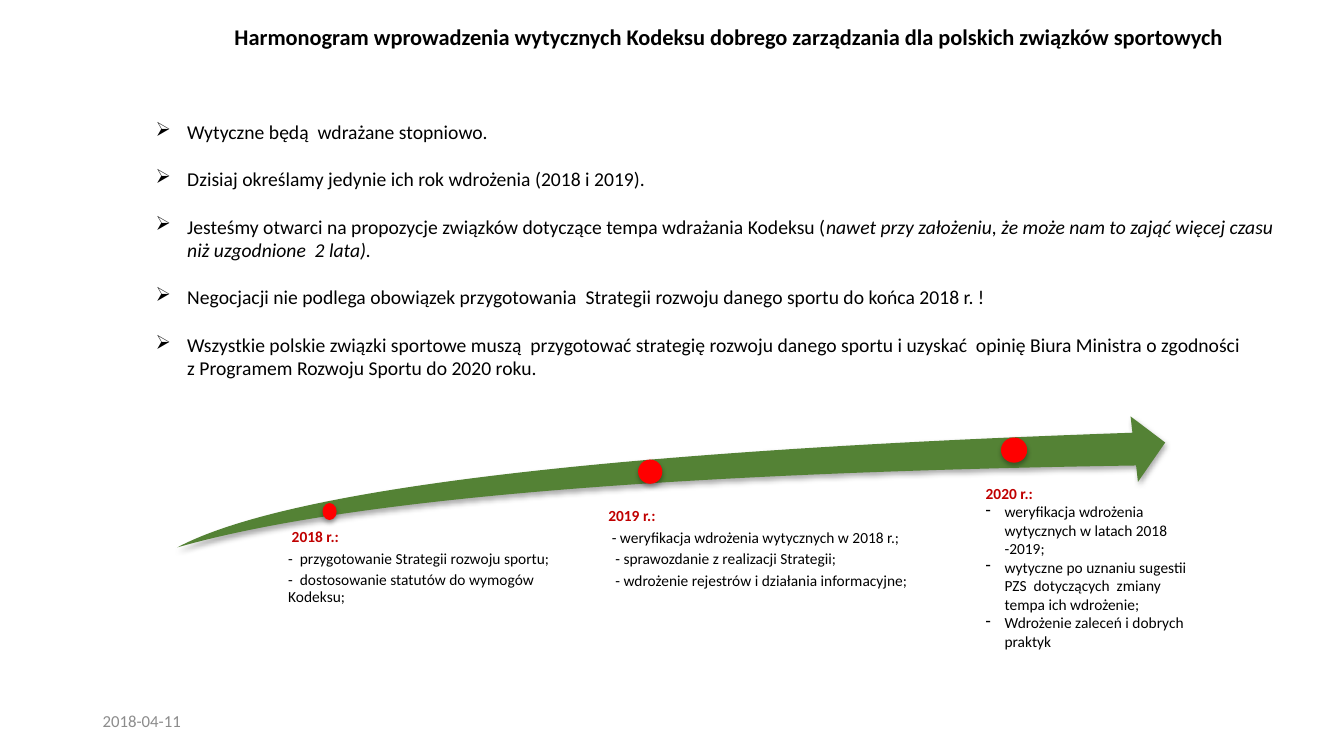
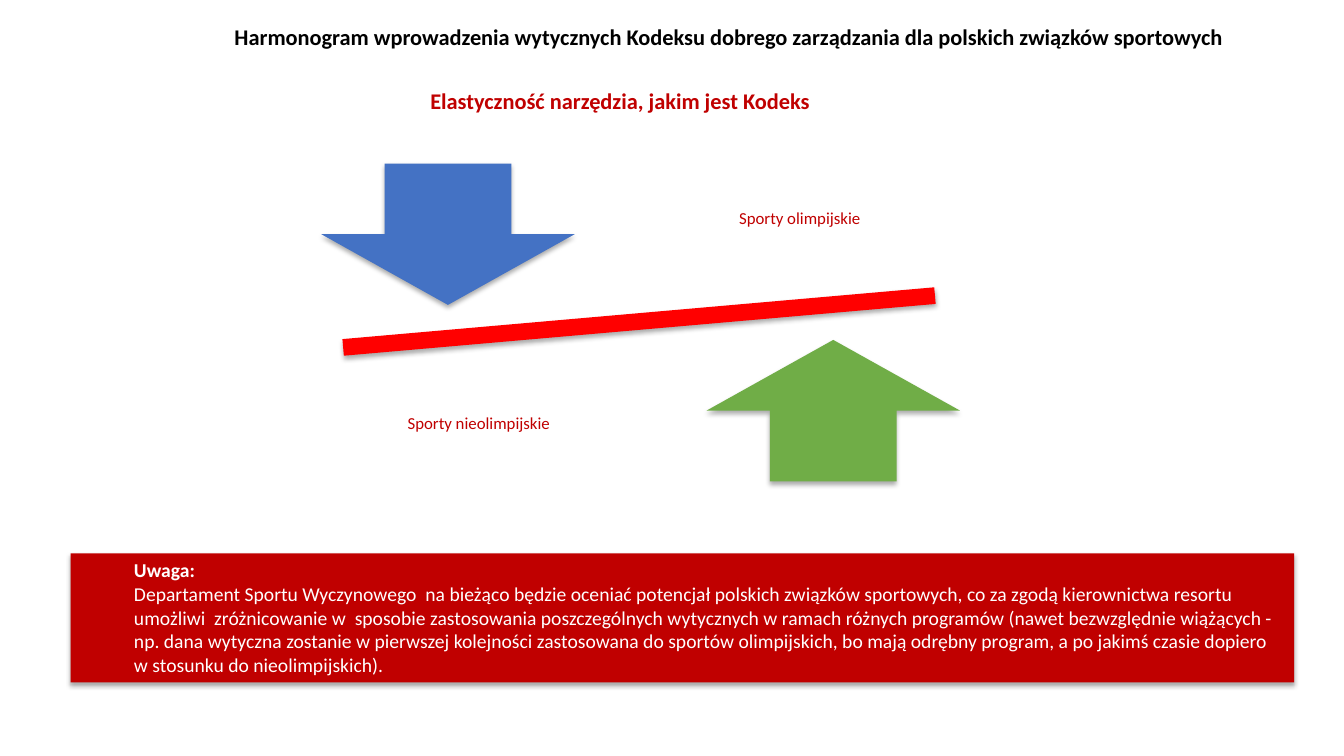
import pptx
import pptx.util
import pptx.dml.color
import pptx.enum.shapes
import pptx.enum.text
import pptx.oxml
import pptx.oxml.ns

Pt = pptx.util.Pt
FORM = pptx.enum.shapes.MSO_SHAPE
ALIGN = pptx.enum.text.PP_ALIGN
ANCHOR = pptx.enum.text.MSO_ANCHOR

HUES = {
    "black": "000000",
    "white": "FFFFFF",
    "gray": "8C8C8C",
    "crimson": "C00000",
    "red": "FF0000",
    "forest": "548235",
    "green": "70AD47",
    "blue": "4472C4",
}
TITLE = "Harmonogram wprowadzenia wytycznych Kodeksu dobrego zarządzania dla polskich związków sportowych"
SHADOW = (
    '<a:outerShdw %s blurRad="%d" dist="%d" dir="5400000" algn="t" rotWithShape="0">'
    '<a:srgbClr val="000000"><a:alpha val="32000"/></a:srgbClr></a:outerShdw>'
    % (pptx.oxml.ns.nsdecls("a"), Pt(3.5), Pt(2.2))
)
BULLET = "<a:buChar %s char=\"%s\"/>"


def apply(item, values):
    for name, value in values.items():
        setattr(item, name, value)


def tone(name):
    return pptx.dml.color.RGBColor.from_string(HUES[name])


def line(*runs, left=0, hang=0, mark=None, **look):
    return {"runs": runs, "left": left, "hang": hang, "mark": mark, "look": look}


class Deck:
    font = "Calibri"
    inset = (7.2, 3.6, 7.2, 3.6)

    def __init__(self):
        self.file = pptx.Presentation()
        apply(self.file, {"slide_width": Pt(960), "slide_height": Pt(540)})
        self.slide = None

    def page(self, title):
        self.slide = self.file.slides.add_slide(self.file.slide_layouts[5])
        head = self.slide.shapes.title
        spots = zip(("left", "top", "width", "height"), (92, 7.2, 857.5, 40.3))
        apply(head, {name: Pt(value) for name, value in spots})
        self.fill(head, [line((title, {"bold": True}), alignment=ALIGN.CENTER, line_spacing=0.9)],
                  16, anchor=ANCHOR.MIDDLE)

    def fill(self, shape, lines, size, hue="black", anchor=ANCHOR.TOP, inset=None):
        frame = shape.text_frame
        sides = ("margin_left", "margin_top", "margin_right", "margin_bottom")
        apply(frame, {side: Pt(gap) for side, gap in zip(sides, inset or self.inset)})
        apply(frame, {"word_wrap": True, "vertical_anchor": anchor,
                      "auto_size": pptx.enum.text.MSO_AUTO_SIZE.NONE})
        for place, entry in enumerate(lines):
            para = frame.add_paragraph() if place else frame.paragraphs[0]
            self.para(para, entry, size, hue)

    def para(self, para, entry, size, hue):
        props = para._p.get_or_add_pPr()
        props.set("marL", str(Pt(entry["left"])))
        props.set("indent", str(Pt(entry["hang"])))
        if entry["mark"]:
            mark = BULLET % (pptx.oxml.ns.nsdecls("a"), entry["mark"])
            props.append(pptx.oxml.parse_xml(mark))
        apply(para, {"alignment": ALIGN.LEFT, "space_before": Pt(0), **entry["look"]})
        for words, look in entry["runs"]:
            for place, part in enumerate(words.split("\n")):
                if place:
                    para.add_line_break()
                run = para.add_run()
                run.text = part
                look = dict(look)
                run.font.color.rgb = tone(look.pop("hue", hue))
                apply(run.font, {"name": self.font, "size": Pt(size), "bold": False, **look})

    def text(self, box, lines, size, **style):
        shape = self.slide.shapes.add_textbox(*map(Pt, box))
        self.fill(shape, lines, size, **style)

    def shape(self, form, box, hue, turn=0):
        shape = self.slide.shapes.add_shape(form, *map(Pt, box))
        shape.fill.solid()
        shape.fill.fore_color.rgb = tone(hue)
        shape.line.fill.background()
        shape.rotation = turn
        shape.shadow.inherit = False
        effects = shape._element.spPr.find(pptx.oxml.ns.qn("a:effectLst"))
        effects.append(pptx.oxml.parse_xml(SHADOW))
        return shape


def plan(deck):
    deck.page(TITLE)
    points = [
        [("Wytyczne będą  wdrażane stopniowo.", {})],
        [("Dzisiaj określamy jedynie ich rok wdrożenia (2018 i 2019).", {})],
        [("Jesteśmy otwarci na propozycje związków dotyczące tempa wdrażania Kodeksu (", {}),
         ("nawet przy założeniu, że może nam to zająć więcej czasu niż uzgodnione  2 lata).",
          {"italic": True})],
        [("Negocjacji nie podlega obowiązek przygotowania  Strategii rozwoju danego sportu do końca 2018 r. !", {})],
        [("Wszystkie polskie związki sportowe muszą  przygotować strategię rozwoju danego sportu "
          "i uzyskać  opinię Biura Ministra o zgodności \nz Programem Rozwoju Sportu do 2020 roku.", {})],
    ]
    deck.text((66.2, 82, 856, 193.7),
              [line(*runs, left=60.5, hang=-22.5, mark="➢", space_after=Pt(17)) for runs in points], 14)
    deck.text((66.2, 500.4, 216, 28.8), [line(("2018-04-11", {}))], 12, hue="gray", anchor=ANCHOR.MIDDLE)

    swoosh = deck.shape(FORM.SWOOSH_ARROW, (126.7, 297.4, 705.6, 93.6), "forest")
    swoosh.adjustments[0] = swoosh.adjustments[1] = 0.25
    for dot in ((230.4, 359.3, 10.1, 12.2), (455.8, 328.3, 17.3, 17.3), (715, 312.5, 18.7, 18)):
        deck.shape(FORM.OVAL, dot, "red")

    strong = {"bold": True, "hue": "crimson"}
    tight = {"line_spacing": 0.9, "space_after": Pt(3.6)}
    years = [
        ((200.9, 378, 219.6, 77.8), 5, "2018 r.:",
         [("-  przygotowanie Strategii rozwoju sportu;", 0),
          ("-  dostosowanie statutów do wymogów Kodeksu;", 0)]),
        ((422.6, 362.9, 275, 85), 9.4, "2019 r.:",
         [("- weryfikacja wdrożenia wytycznych w 2018 r.;", 5),
          ("- sprawozdanie z realizacji Strategii;", 7.5),
          ("- wdrożenie rejestrów i działania informacyjne;", 7.5)]),
    ]
    for box, edge, year, tasks in years:
        lines = [line((year, strong), left=2.5, **tight)]
        lines += [line((task, {}), left=left, **tight) for task, left in tasks]
        deck.text(box, lines, 11, inset=(edge, 0, 0, 0))

    goals = ["weryfikacja wdrożenia wytycznych w latach 2018 -2019;",
             "wytyczne po uznaniu sugestii  PZS  dotyczących  zmiany tempa ich wdrożenie;",
             "Wdrożenie zaleceń i dobrych praktyk"]
    deck.text((697, 342, 168.5, 127.4),
              [line(("2020 r.:", strong))]
              + [line((goal, {}), left=13.5, hang=-13.5, mark="-") for goal in goals], 11)


def balance(deck):
    deck.page(TITLE)
    deck.text((32.2, 59, 821.5, 85),
              [line(("Elastyczność narzędzia, jakim jest Kodeks", {"bold": True}), alignment=ALIGN.CENTER)],
              16, hue="crimson")
    note = deck.shape(FORM.RECTANGLE, (50.4, 395.3, 874, 92.2), "crimson")
    words = ("Departament Sportu Wyczynowego  na bieżąco będzie oceniać potencjał polskich związków "
             "sportowych, co za zgodą kierownictwa resortu umożliwi  zróżnicowanie w  sposobie "
             "zastosowania poszczególnych wytycznych w ramach różnych programów (nawet bezwzględnie "
             "wiążących - np. dana wytyczna zostanie w pierwszej kolejności zastosowana do sportów "
             "olimpijskich, bo mają odrębny program, a po jakimś czasie dopiero w stosunku do "
             "nieolimpijskich).")
    deck.fill(note, [line(("Uwaga:", {"bold": True}), left=38.2), line((words, {}), left=38.2)],
              14, hue="white")

    deck.shape(FORM.MATH_MINUS, (167.8, 204.5, 577.4, 50.4), "red", turn=355)
    deck.shape(FORM.DOWN_ARROW, (229.5, 116.8, 181, 101), "blue")
    deck.shape(FORM.UP_ARROW, (504.7, 242.8, 181, 101), "green")
    for box, label in (((426.2, 103.7, 290.2, 105.8), "Sporty olimpijskie"),
                       ((245.5, 249.8, 193, 105.8), "Sporty nieolimpijskie")):
        deck.text(box, [line((label, {}), alignment=ALIGN.CENTER, line_spacing=0.9)], 12,
                  hue="crimson", anchor=ANCHOR.MIDDLE, inset=(6.5,) * 4)


def main():
    deck = Deck()
    plan(deck)
    balance(deck)
    deck.file.save("out.pptx")


if __name__ == "__main__":
    main()
